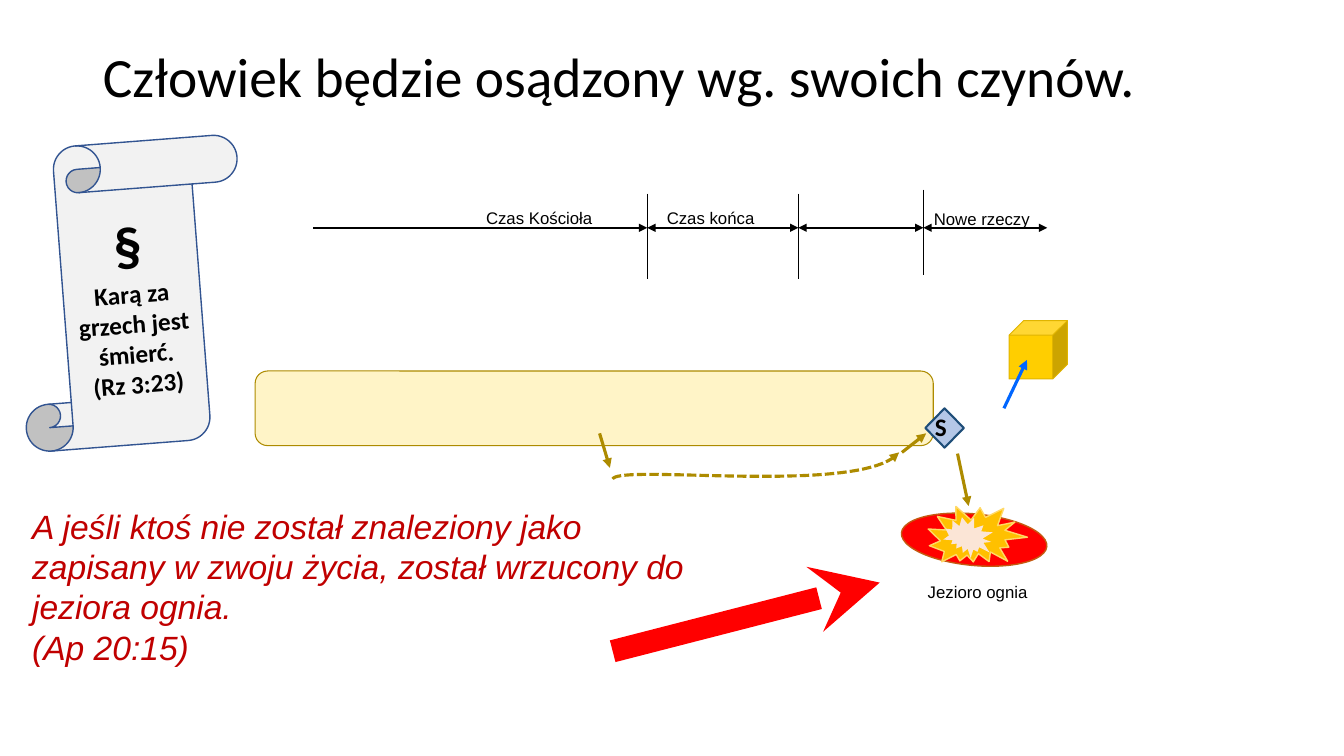
import dataclasses
import typing

import pptx
import pptx.dml.color
import pptx.enum.dml
import pptx.enum.shapes
import pptx.enum.text
import pptx.oxml
import pptx.oxml.ns
import pptx.util

Cm = pptx.util.Cm
Pt = pptx.util.Pt
Preset = pptx.enum.shapes.MSO_SHAPE
Align = pptx.enum.text.PP_ALIGN
Anchor = pptx.enum.text.MSO_ANCHOR
Point = tuple[float, float]
Box = tuple[float, float, float, float]


@dataclasses.dataclass(frozen=True)
class Theme:
    black: str = "000000"
    olive: str = "AD8B00"
    cream: str = "FFF4C7"
    red: str = "FF0000"
    verse_red: str = "C00000"
    blue: str = "0066FF"
    title_size: float = 39.6
    section_size: float = 40
    verse_size: float = 24
    body_size: float = 18
    label_size: float = 12
    heading_font: str = "Calibri"
    label_font: str = "Arial"


THEME = Theme()


@dataclasses.dataclass(frozen=True)
class Figure:
    preset: Preset
    box: Box
    fill: str
    outline: str | None = None
    width: float = 1
    rotation: float = 0
    adjustment: float | None = None


@dataclasses.dataclass(frozen=True)
class Line:
    start: Point
    end: Point
    color: str = THEME.black
    width: float = 1.5
    head: str | None = None
    tail: str | None = "triangle"


@dataclasses.dataclass(frozen=True)
class Style:
    size: float
    font: str = THEME.heading_font
    color: str = THEME.black
    bold: bool = False
    italic: bool = False


@dataclasses.dataclass(frozen=True)
class Label:
    text: str
    box: Box


TIMELINE_Y = 5.74
TIMELINE_X = (7.9, 16.31, 20.12, 23.27, 26.39)
TICK_TOPS = (4.88, 4.88, 4.78)
TICK_HEIGHT = 2.16

AGES = [
    Line((left, TIMELINE_Y), (right, TIMELINE_Y), head="triangle" if index else None)
    for index, (left, right) in enumerate(zip(TIMELINE_X, TIMELINE_X[1:]))
]
TICKS = [
    Line((x, top), (x, top + TICK_HEIGHT), width=0.5, tail=None)
    for x, top in zip(TIMELINE_X[1:-1], TICK_TOPS)
]
ARROWS = [
    Line((22.73, 11.4), (23.34, 10.92), THEME.olive, 2.25),
    Line((15.11, 10.92), (15.37, 11.79), THEME.olive, 2.25),
    Line((24.13, 11.43), (24.41, 12.75), THEME.olive, 2.25),
    Line((25.3, 10.29), (25.88, 9.07), THEME.blue, 2.25),
    Line((15.44, 16.41), (22.17, 14.68), THEME.red, 16, tail="stealth"),
]
LABELS = [
    Label("Czas Kościoła", (11.76, 5.16, 3.66, 0.66)),
    Label("Czas końca", (16.46, 5.16, 2.9, 0.66)),
    Label("Nowe rzeczy", (23.27, 5.18, 2.95, 0.66)),
    Label("Jezioro ognia", (22.81, 14.58, 3.66, 0.66)),
]
JUDGEMENT_PATH = ((15.44, 12.07), (15.62, 11.68), (21.77, 12.5), (22.66, 11.4))

LIFE_BAND = Figure(Preset.ROUNDED_RECTANGLE, (6.43, 9.35, 17.09, 1.88),
                   THEME.cream, THEME.olive, 0.75, adjustment=0.167)
NEW_CITY = Figure(Preset.CUBE, (25.43, 8.08, 1.47, 1.47), "FFCE00", "E0B400", 0.75)
JUDGEMENT = Figure(Preset.DIAMOND, (23.32, 10.29, 0.97, 0.99), "B4C7E7", "1F4E79", 1.5)
SCROLL = Figure(Preset.VERTICAL_SCROLL, (0.41, 3.58, 5.82, 7.62),
                "F2F2F2", "325491", rotation=355.6, adjustment=0.203)
FIRE_LAKE = [
    Figure(Preset.FLOWCHART_CONNECTOR, (22.71, 12.95, 3.68, 1.3), THEME.red, "C55A11", rotation=5.4),
    Figure(Preset.EXPLOSION2, (23.39, 12.65, 2.46, 1.73), "FFC000", "FFD966", rotation=16.2),
    Figure(Preset.EXPLOSION2, (23.83, 12.98, 1.19, 1.14), "FBE5D6", rotation=56.2),
]


def rgb(color: str) -> pptx.dml.color.RGBColor:
    return pptx.dml.color.RGBColor.from_string(color)


def add_arrowheads(drawn: typing.Any, head: str | None, tail: str | None) -> None:
    outline = drawn.element.spPr.find(pptx.oxml.ns.qn("a:ln"))
    for tag, kind in (("headEnd", head), ("tailEnd", tail)):
        if kind:
            outline.append(pptx.oxml.parse_xml(
                f'<a:{tag} {pptx.oxml.ns.nsdecls("a")} type="{kind}"/>'))


def draw_line(shapes: typing.Any, line: Line) -> None:
    connector = shapes.add_connector(
        pptx.enum.shapes.MSO_CONNECTOR.STRAIGHT, *map(Cm, line.start + line.end))
    connector.line.color.rgb = rgb(line.color)
    connector.line.width = Pt(line.width)
    add_arrowheads(connector, line.head, line.tail)
    connector.element.spPr.append(
        pptx.oxml.parse_xml(f'<a:effectLst {pptx.oxml.ns.nsdecls("a")}/>'))


def draw_figure(shapes: typing.Any, figure: Figure) -> typing.Any:
    shape = shapes.add_shape(figure.preset, *map(Cm, figure.box))
    shape.shadow.inherit = False
    shape.rotation = figure.rotation
    shape.fill.solid()
    shape.fill.fore_color.rgb = rgb(figure.fill)
    if figure.outline:
        shape.line.color.rgb = rgb(figure.outline)
        shape.line.width = Pt(figure.width)
    else:
        shape.line.fill.background()
    if figure.adjustment is not None:
        shape.adjustments[0] = figure.adjustment
    return shape


def draw_dashed_curve(shapes: typing.Any, controls: tuple[Point, ...], steps: int = 40) -> None:
    """Trace a cubic Bézier curve through short segments."""
    points = []
    for step in range(steps + 1):
        t = step / steps
        weights = ((1 - t) ** 3, 3 * t * (1 - t) ** 2, 3 * t ** 2 * (1 - t), t ** 3)
        points.append(tuple(
            Cm(sum(w * control[axis] for w, control in zip(weights, controls)))
            for axis in (0, 1)))
    builder = shapes.build_freeform(*points[0])
    builder.add_line_segments(points[1:], close=False)
    curve = builder.convert_to_shape()
    curve.shadow.inherit = False
    curve.fill.background()
    curve.line.color.rgb = rgb(THEME.olive)
    curve.line.width = Pt(2.25)
    curve.line.dash_style = pptx.enum.dml.MSO_LINE.SQUARE_DOT
    add_arrowheads(curve, None, "triangle")


def write(frame: typing.Any, lines: list[tuple[str, Style]], align: Align,
          anchor: Anchor = Anchor.MIDDLE) -> None:
    frame.word_wrap = True
    frame.vertical_anchor = anchor
    for index, (text, style) in enumerate(lines):
        paragraph = frame.add_paragraph() if index else frame.paragraphs[0]
        paragraph.alignment = align
        run = paragraph.add_run()
        run.text = text
        run.font.name, run.font.size = style.font, Pt(style.size)
        run.font.bold, run.font.italic = style.bold, style.italic
        run.font.color.rgb = rgb(style.color)


def set_margins(frame: typing.Any, side: float, end: float) -> None:
    frame.margin_left = frame.margin_right = Cm(side)
    frame.margin_top = frame.margin_bottom = Cm(end)


def add_text_box(shapes: typing.Any, box: Box) -> typing.Any:
    frame = shapes.add_textbox(*map(Cm, box)).text_frame
    frame.auto_size = pptx.enum.text.MSO_AUTO_SIZE.SHAPE_TO_FIT_TEXT
    return frame


def main() -> None:
    presentation = pptx.Presentation()
    presentation.slide_width, presentation.slide_height = Cm(33.87), Cm(19.05)
    slide = presentation.slides.add_slide(presentation.slide_layouts.get_by_name("Title Only"))
    shapes = slide.shapes

    title = shapes.title
    title.left, title.top, title.width, title.height = map(Cm, (2.34, 1.02, 29.21, 1.98))
    write(title.text_frame, [("Człowiek będzie osądzony wg. swoich czynów.",
                              Style(THEME.title_size))], Align.LEFT)
    title.text_frame.paragraphs[0].line_spacing = 0.9

    for figure in (LIFE_BAND, NEW_CITY):
        draw_figure(shapes, figure)
    draw_dashed_curve(shapes, JUDGEMENT_PATH)
    for line in AGES + TICKS + ARROWS:
        draw_line(shapes, line)
    for label in LABELS:
        caption = add_text_box(shapes, label.box)
        set_margins(caption, 0.08, 0.08)
        write(caption, [(label.text, Style(THEME.label_size, THEME.label_font))], Align.CENTER)

    bold = Style(THEME.body_size, bold=True)
    judgement = draw_figure(shapes, JUDGEMENT).text_frame
    set_margins(judgement, 0, 0.1)
    write(judgement, [("S", bold)], Align.LEFT)
    judgement.paragraphs[0].line_spacing = 0.9

    fire_lake = shapes.add_group_shape()
    for figure in FIRE_LAKE:
        draw_figure(fire_lake.shapes, figure)

    verse_style = Style(THEME.verse_size, THEME.label_font, THEME.verse_red, italic=True)
    write(add_text_box(shapes, (0.56, 12.62, 17.2, 4.37)), [
        ("A jeśli ktoś nie został znaleziony jako zapisany w zwoju życia, "
         "został wrzucony do jeziora ognia.", verse_style),
        ("(Ap 20:15)", verse_style)], Align.LEFT, Anchor.TOP)
    write(draw_figure(shapes, SCROLL).text_frame, [
        ("§", Style(THEME.section_size, bold=True)),
        ("Karą za grzech jest śmierć.", bold),
        ("(Rz 3:23)", bold)], Align.CENTER)

    presentation.save("out.pptx")


if __name__ == "__main__":
    main()
